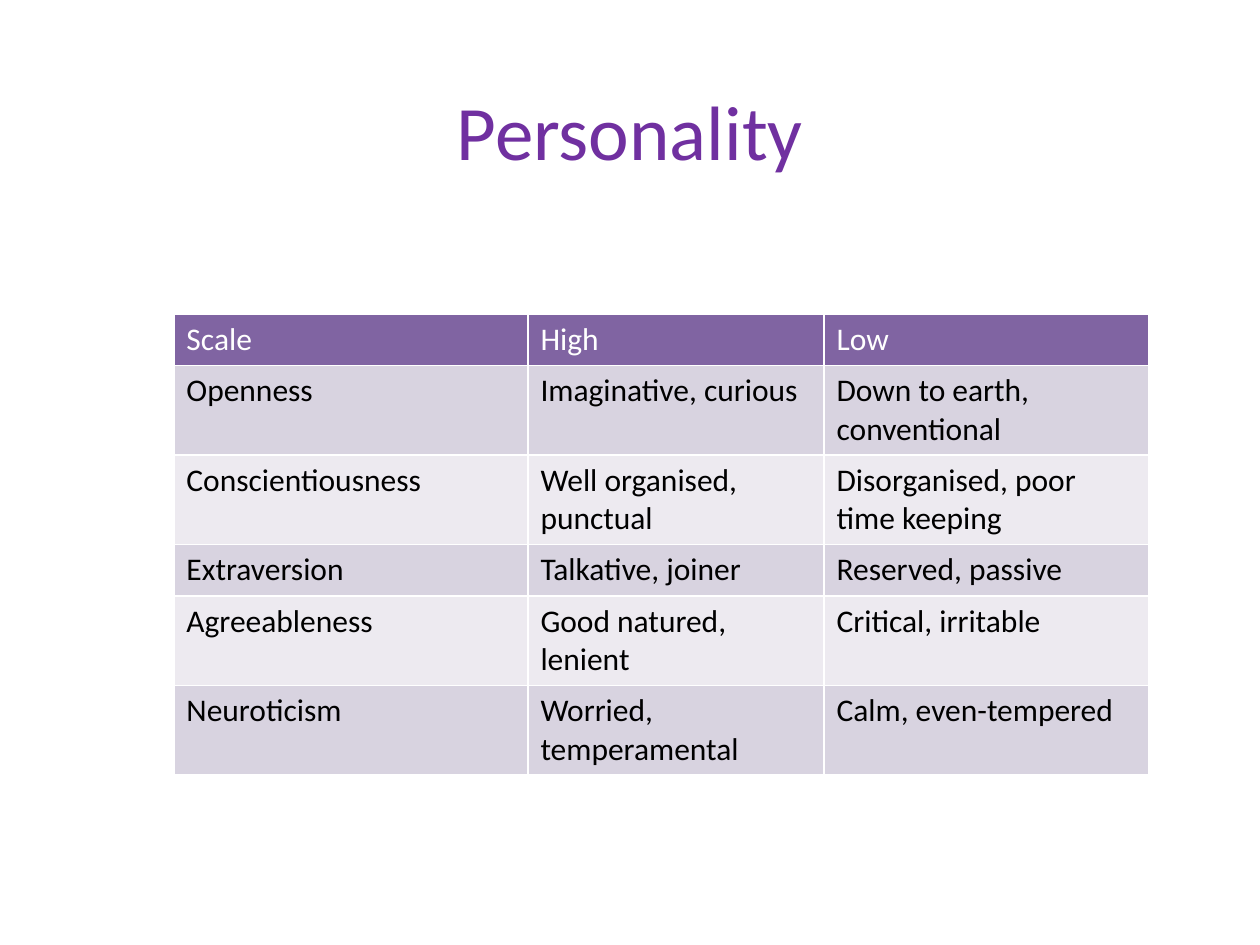
from lxml import etree
from pptx import Presentation
from pptx.dml.color import RGBColor
from pptx.enum import text
from pptx.oxml import ns
from pptx.util import Inches, Pt

TITLE = "Personality\v"
ROWS = [
    ("Scale", "High", "Low"),
    ("Openness", "Imaginative, curious", "Down to earth, conventional"),
    ("Conscientiousness", "Well organised, punctual", "Disorganised, poor time keeping"),
    ("Extraversion", "Talkative, joiner", "Reserved, passive"),
    ("Agreeableness", "Good natured, lenient", "Critical, irritable"),
    ("Neuroticism", "Worried, temperamental", "Calm, even-tempered"),
]
COLUMN_WIDTHS = [2.81, 2.35, 2.58]
ROW_HEIGHT = 0.41
FONT = "Calibri"
PURPLE = RGBColor(0x70, 0x30, 0xA0)
HEADER = RGBColor(0x80, 0x64, 0xA2)
BANDS = [RGBColor(0xED, 0xEA, 0xF0), RGBColor(0xD8, 0xD3, 0xE0)]
WHITE = RGBColor(0xFF, 0xFF, 0xFF)
BLACK = RGBColor(0, 0, 0)


def format_runs(paragraph, size, color):
    for run in paragraph.runs:
        run.font.name = FONT
        run.font.size = Pt(size)
        run.font.bold = False
        run.font.color.rgb = color


def add_borders(cell):
    properties = cell._tc.get_or_add_tcPr()
    for index, side in enumerate(("lnL", "lnR", "lnT", "lnB")):
        line = etree.Element(ns.qn(f"a:{side}"), w=str(Pt(1)))
        fill = etree.SubElement(line, ns.qn("a:solidFill"))
        etree.SubElement(fill, ns.qn("a:srgbClr"), val=str(WHITE))
        properties.insert(index, line)


def add_title(slide):
    title = slide.shapes.title
    title.left, title.top = Inches(0.5), Inches(0.88)
    title.width, title.height = Inches(9), Inches(1.03)
    title.text_frame.text = TITLE
    title.text_frame.vertical_anchor = text.MSO_ANCHOR.MIDDLE
    paragraph = title.text_frame.paragraphs[0]
    paragraph.alignment = text.PP_ALIGN.CENTER
    format_runs(paragraph, 44, PURPLE)


def add_scale_table(slide):
    table = slide.shapes.add_table(
        len(ROWS), len(COLUMN_WIDTHS), Inches(1.38), Inches(2.49),
        Inches(sum(COLUMN_WIDTHS)), Inches(ROW_HEIGHT * len(ROWS))).table
    for column, width in zip(table.columns, COLUMN_WIDTHS):
        column.width = Inches(width)
    for row_index, row in enumerate(ROWS):
        for column_index, wording in enumerate(row):
            cell = table.cell(row_index, column_index)
            cell.text_frame.text = wording
            cell.fill.solid()
            cell.fill.fore_color.rgb = BANDS[row_index % 2] if row_index else HEADER
            format_runs(cell.text_frame.paragraphs[0], 18, BLACK if row_index else WHITE)
            add_borders(cell)


def main():
    presentation = Presentation()
    presentation.slide_width, presentation.slide_height = Inches(10), Inches(7.5)
    slide = presentation.slides.add_slide(presentation.slide_layouts[5])
    add_title(slide)
    add_scale_table(slide)
    presentation.save("out.pptx")


if __name__ == "__main__":
    main()
